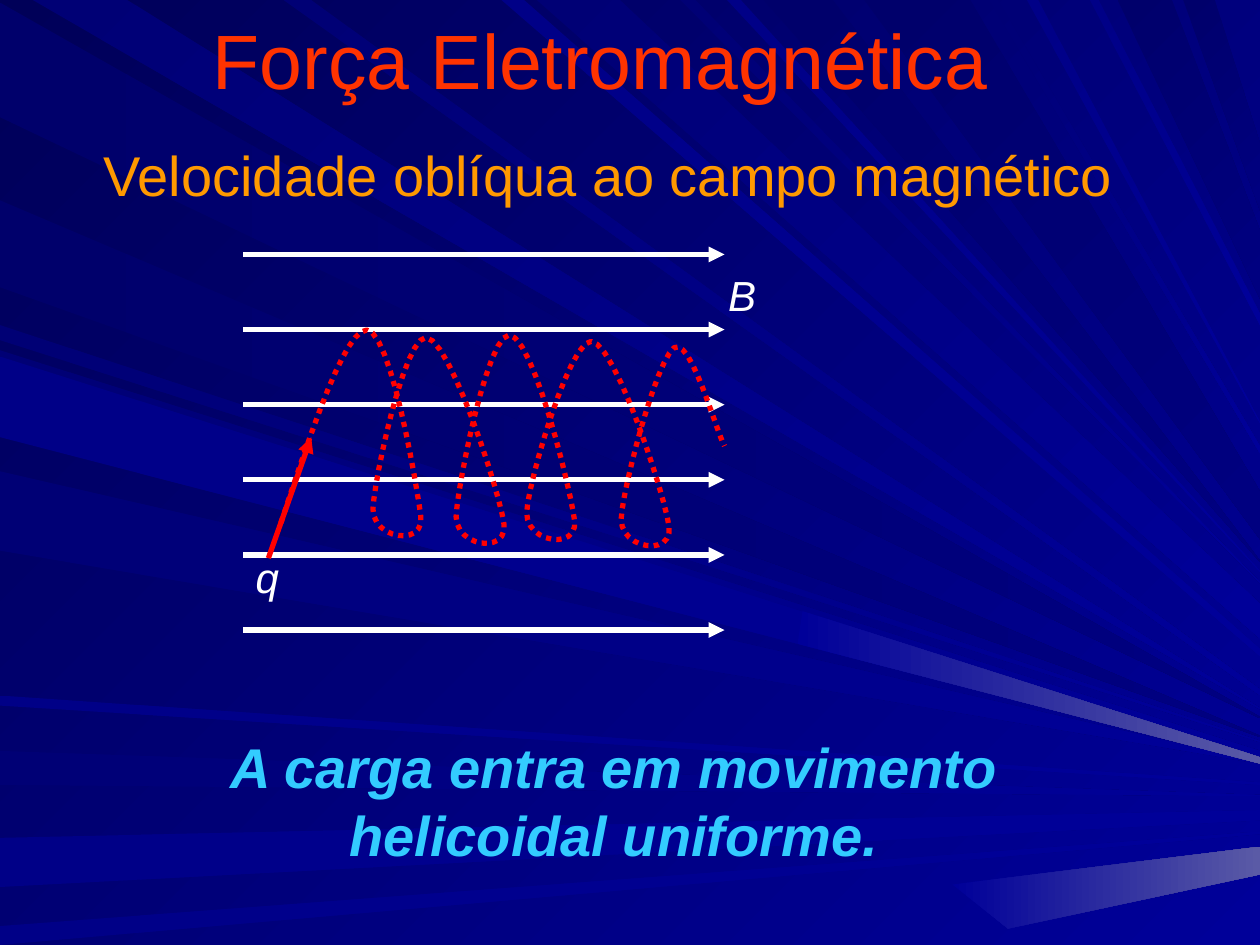
from functools import partial

from lxml.etree import SubElement
from pptx import Presentation
from pptx.dml.color import RGBColor
from pptx.enum.dml import MSO_LINE
from pptx.enum.shapes import MSO_CONNECTOR
from pptx.enum.text import MSO_ANCHOR, MSO_AUTO_SIZE, PP_ALIGN
from pptx.oxml.ns import qn
from pptx.util import Inches, Pt

# The slide is a grid of square cells.
COLUMNS, ROWS = 100, 75
CELL = Inches(0.1)

navy = partial(RGBColor, 0, 0)
MIDNIGHT, DARK, ROYAL = navy(0x58), navy(0x80), navy(0x99)
GLINT = RGBColor(0x5A, 0x5A, 0xA6)
WHITE = RGBColor(0xFF, 0xFF, 0xFF)
RED = RGBColor(0xFF, 0x00, 0x00)
VERMILION = RGBColor(0xFF, 0x33, 0x00)
ORANGE = RGBColor(0xFF, 0x99, 0x00)
SKY = RGBColor(0x33, 0xCC, 0xFF)

SHADOW = (navy(0x6B), DARK)
DEEP = (navy(0x75), ROYAL)
SOFT = (navy(0x87), ROYAL)
SHINE = (ROYAL, GLINT)

# Colours, two rows on the left edge, two rows on the right edge.
LEFT_RAYS = [
    (SHADOW, 0.2, 9.3, 56.9, 57),
    (DEEP, 59.6, 62.3, 63.1, 63.2),
    (SOFT, 66.5, 70.4, 64.3, 65.1),
    (SOFT, 73.5, 75, 66, 66.2),
    (DEEP, 25.8, 27, 58.8, 58.9),
    (SHADOW, 15.9, 22.8, 58.4, 58.5),
    (DEEP, 27.8, 34.2, 59.6, 60.2),
    (DEEP, 37.4, 43.7, 60.5, 60.6),
    (SOFT, 55.2, 56, 62.1, 62.3),
    (SOFT, 28.3, 34.7, 60.1, 60.6),
]
# Colours, two columns on the top edge, two rows on the right edge.
TOP_RAYS = [
    (DEEP, 2.6, 10.1, 56.2, 56.3),
    (SOFT, 39.8, 41.6, 51.5, 52.1),
    (DEEP, 42.6, 49.2, 47.9, 50.7),
    (DEEP, 54, 55.2, 46.2, 46.3),
    (SHADOW, 60.6, 66.1, 44.5, 44.6),
    (SHADOW, 88.7, 93, 18.3, 23.7),
    (SHADOW, 93.9, 96.4, 11.4, 16.7),
    (DEEP, 22.5, 24.7, 54.7, 55.2),
    (SOFT, 57.7, 58.8, 45.3, 45.4),
    (SHADOW, 68.6, 77, 39, 42.8),
    (DEEP, 78.5, 79.2, 35.4, 36),
    (SOFT, 81.5, 82.4, 33.5, 33.6),
    (SOFT, 86.5, 87.2, 24.9, 25.8),
]
GLINTS = [
    [(63.7, 48.5), (63.3, 51.1), (100, 60.6), (100, 60.1)],
    [(75.6, 70.2), (80, 73.7), (100, 69.4), (100, 67.2)],
]

HELIX_START, HELIX_END = (22.3, 41.5), (57.5, 35.4)
CRESTS = [(29.1, 26.2), (33.8, 26.8), (40.4, 26.6), (46.9, 27.1), (53.5, 27.6)]
TROUGHS = [(33.4, 41), (40, 41.6), (45.6, 41.3), (53.1, 41.8)]
SAMPLES = 12


def cells(*counts):
    return [round(count * CELL) for count in counts]


def moved(point, across, down):
    return point[0] + across, point[1] + down


def paint(fill, first, last, angle):
    """Fill with a gradient turned clockwise by angle."""
    fill.gradient()
    fill.gradient_angle = (360 - angle) % 360
    for stop, color in zip(fill.gradient_stops, (first, last)):
        stop.color.rgb = color


def add_outline(slide, points, close):
    corners = [cells(*point) for point in points]
    builder = slide.shapes.build_freeform(*corners[0])
    builder.add_line_segments(corners[1:], close=close)
    shape = builder.convert_to_shape()
    shape.shadow.inherit = False
    return shape


def add_ray(slide, colors, corners, angle):
    ray = add_outline(slide, corners, close=True)
    paint(ray.fill, *colors, angle)
    ray.line.fill.background()


def add_backdrop(slide):
    paint(slide.background.fill, MIDNIGHT, ROYAL, 45)
    for colors, upper, lower, high, low in LEFT_RAYS:
        add_ray(slide, colors, [(0, upper), (0, lower), (COLUMNS, low), (COLUMNS, high)], 0)
    for colors, left, right, high, low in TOP_RAYS:
        add_ray(slide, colors, [(left, 0), (right, 0), (COLUMNS, high), (COLUMNS, low)], 45)
    for corners in GLINTS:
        add_ray(slide, SHINE, corners, 0)


def helix_steps():
    """Give the four Bézier knots of each rise, fall and turn."""
    bottom = HELIX_START
    rise = (2.5, -7.6)
    for crest, trough in zip(CRESTS, TROUGHS):
        yield bottom, moved(bottom, *rise), moved(crest, -1.7, 0), crest
        yield crest, moved(crest, 1.9, 0), moved(trough, -0.3, -2.4), trough
        bottom = moved(trough, -3.8, -0.6)
        yield trough, moved(trough, 0.3, 2.4), moved(bottom, 0, 2.4), bottom
        rise = (0.1, -2.4)
    crest = CRESTS[-1]
    yield bottom, moved(bottom, *rise), moved(crest, -1.4, 1), crest
    yield crest, moved(crest, 1.3, -0.9), moved(HELIX_END, -0.7, -1.3), HELIX_END


def curve_points(steps):
    points = [HELIX_START]
    for knots in steps:
        for sample in range(1, SAMPLES + 1):
            t = sample / SAMPLES
            s = 1 - t
            weights = (s ** 3, 3 * t * s ** 2, 3 * t ** 2 * s, t ** 3)
            points.append([sum(weight * knot[axis] for weight, knot in zip(weights, knots))
                           for axis in (0, 1)])
    return points


def add_helix(slide):
    helix = add_outline(slide, curve_points(helix_steps()), close=False)
    helix.fill.background()
    helix.line.color.rgb = RED
    helix.line.width = Pt(3)
    helix.line.dash_style = MSO_LINE.ROUND_DOT


def add_arrow(slide, start, end, color):
    arrow = slide.shapes.add_connector(MSO_CONNECTOR.STRAIGHT, *cells(*start, *end))
    arrow.line.color.rgb = color
    arrow.line.width = Pt(3)
    properties = arrow._element.spPr
    SubElement(properties.find(qn("a:ln")), qn("a:tailEnd"), type="triangle")
    SubElement(properties, qn("a:effectLst"))


def add_text(slide, text, box, size, color, align=PP_ALIGN.CENTER, bold=False, italic=False):
    frame = slide.shapes.add_textbox(*cells(*box)).text_frame
    frame.word_wrap = True
    frame.auto_size = MSO_AUTO_SIZE.NONE
    frame.vertical_anchor = MSO_ANCHOR.MIDDLE
    frame.text = text
    paragraph = frame.paragraphs[0]
    paragraph.alignment = align
    font = paragraph.runs[0].font
    font.name, font.size, font.bold, font.italic = "Arial", Pt(size), bold, italic
    font.color.rgb = color


def main():
    presentation = Presentation()
    presentation.slide_width, presentation.slide_height = cells(COLUMNS, ROWS)
    slide = presentation.slides.add_slide(presentation.slide_layouts[6])
    add_backdrop(slide)

    add_text(slide, "Força Eletromagnética ", (3.5, 0, 90, 9.4), 44, VERMILION)
    add_text(slide, "Velocidade oblíqua ao campo magnético", (3.3, 9.1, 90, 9.4), 32, ORANGE)
    add_text(slide, "A carga entra em movimento helicoidal uniforme.",
             (15.3, 58.8, 66.9, 9.4), 32, SKY, bold=True, italic=True)

    for index in range(6):
        row = 20.2 + 5.96 * index
        add_arrow(slide, (19.3, row), (57.5, row), WHITE)
    add_text(slide, "q", (19.3, 43.3, 6.1, 5), 24, WHITE, PP_ALIGN.LEFT, italic=True)
    add_text(slide, "B", (56.8, 20.9, 3.4, 5), 24, WHITE, PP_ALIGN.LEFT, italic=True)
    add_arrow(slide, (21.3, 44.3), (24.7, 34.7), RED)
    add_helix(slide)
    presentation.save("out.pptx")


if __name__ == "__main__":
    main()
